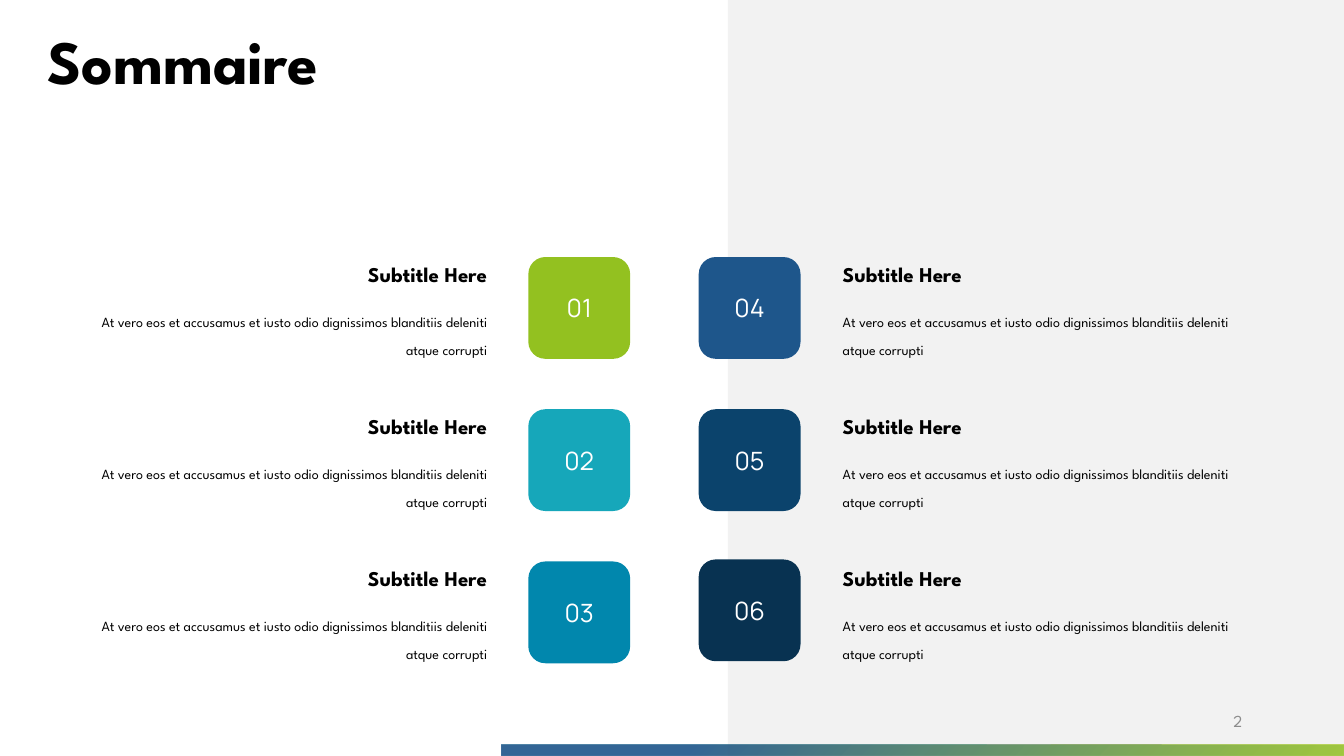
from lxml import etree
from pptx import Presentation
from pptx.dml.color import RGBColor as RGB
from pptx.enum.shapes import MSO_SHAPE as SHAPE
from pptx.enum.text import MSO_ANCHOR as ANCHOR, PP_ALIGN as ALIGN
from pptx.oxml.ns import qn
from pptx.util import Inches, Pt

W, H = 13.33, 7.5
COLORS = {"black": "000000", "white": "FFFFFF", "gray": "8C8C8C",
          "panel": "F2F2F2", "green": "93C120", "teal": "16A7BA",
          "cyan": "0187AD", "blue": "1E568B", "navy": "0B436C",
          "night": "083251"}
BODY = ("At vero eos et accusamus et iusto odio dignissimos "
        "blanditiis deleniti atque corrupti")

prs = Presentation()
prs.slide_width, prs.slide_height = Inches(W), Inches(H)
s = prs.slides.add_slide(prs.slide_layouts[6])


def add_block(shape, x, y, w, h, fill=None):
    sp = s.shapes.add_shape(shape, *map(Inches, (x, y, w, h)))
    sp.shadow.inherit = False
    sp.line.fill.background()
    if fill:
        sp.fill.solid()
        sp.fill.fore_color.rgb = RGB.from_string(COLORS[fill])
    return sp


def write(text, size, align, box=None, sp=None, color="black", bold=False,
          name="League Spartan", anchor=ANCHOR.TOP, spacing=None):
    sp = sp or s.shapes.add_textbox(*map(Inches, box))
    tf = sp.text_frame
    tf.word_wrap, tf.vertical_anchor = True, anchor
    p = tf.paragraphs[0]
    p.alignment, p.line_spacing = align, spacing
    r = p.add_run()
    r.text = text
    for key, value in {"size": Pt(size), "name": name, "bold": bold}.items():
        setattr(r.font, key, value)
    r.font.color.rgb = RGB.from_string(COLORS[color])


# Background panel and gradient band
PANEL_X, BAND_X, BAND_Y = 7.22, 4.97, 7.39
add_block(SHAPE.RECTANGLE, PANEL_X, 0, W - PANEL_X, H, "panel")
band = add_block(SHAPE.RECTANGLE, BAND_X, BAND_Y, W - BAND_X, H - BAND_Y)
band.fill.gradient()
band.fill.gradient_angle = 315
for stop, (pos, color, alpha) in zip(
        band.fill.gradient_stops, [(0.23, "blue", 90), (1, "green", 85)]):
    stop.position = pos
    stop.color.rgb = RGB.from_string(COLORS[color])
for clr, alpha in zip(band._element.spPr.iter(qn("a:srgbClr")), (90, 85)):
    etree.SubElement(clr, qn("a:alpha")).set("val", str(alpha * 1000))

# Title and slide number
write("Sommaire", 44, ALIGN.LEFT, (0.37, 0.09, 11.5, 1.1), bold=True,
      anchor=ANCHOR.MIDDLE, spacing=0.9)
write("2", 12, ALIGN.RIGHT, (9.42, 6.95, 3, 0.4), color="gray",
      anchor=ANCHOR.MIDDLE)

# Agenda: two columns of three numbered tiles with their texts
TOP, PITCH, TILE, HEAD_W = 2.54, 1.51, 1.01, 2.18
columns = [
    # tile x, heading x, body x, body width, alignment, tile colours
    (5.24, 4.93 - HEAD_W, 0.86, 4.07, ALIGN.RIGHT, ("green", "teal", "cyan")),
    (6.93, 8.26, 8.26, 4.22, ALIGN.LEFT, ("blue", "navy", "night")),
]
for col, (tile_x, head_x, body_x, body_w, align, fills) in enumerate(columns):
    for row, fill in enumerate(fills):
        y = TOP + row * PITCH
        number = col * len(fills) + row + 1
        nudge = -0.01 if number == 6 else 0.01  # last tile sits a touch higher
        tile = add_block(SHAPE.ROUNDED_RECTANGLE, tile_x, y + nudge,
                         TILE, TILE, fill)
        write(f"{number:02d}", 18, ALIGN.CENTER, sp=tile, color="white",
              name="Manrope", anchor=ANCHOR.MIDDLE)
        write("Subtitle Here", 15, align, (head_x, y, HEAD_W, 0.35), bold=True)
        write(BODY, 10, align, (body_x, y + 0.41, body_w, 0.63),
              spacing=Pt(20))

prs.save("out.pptx")
